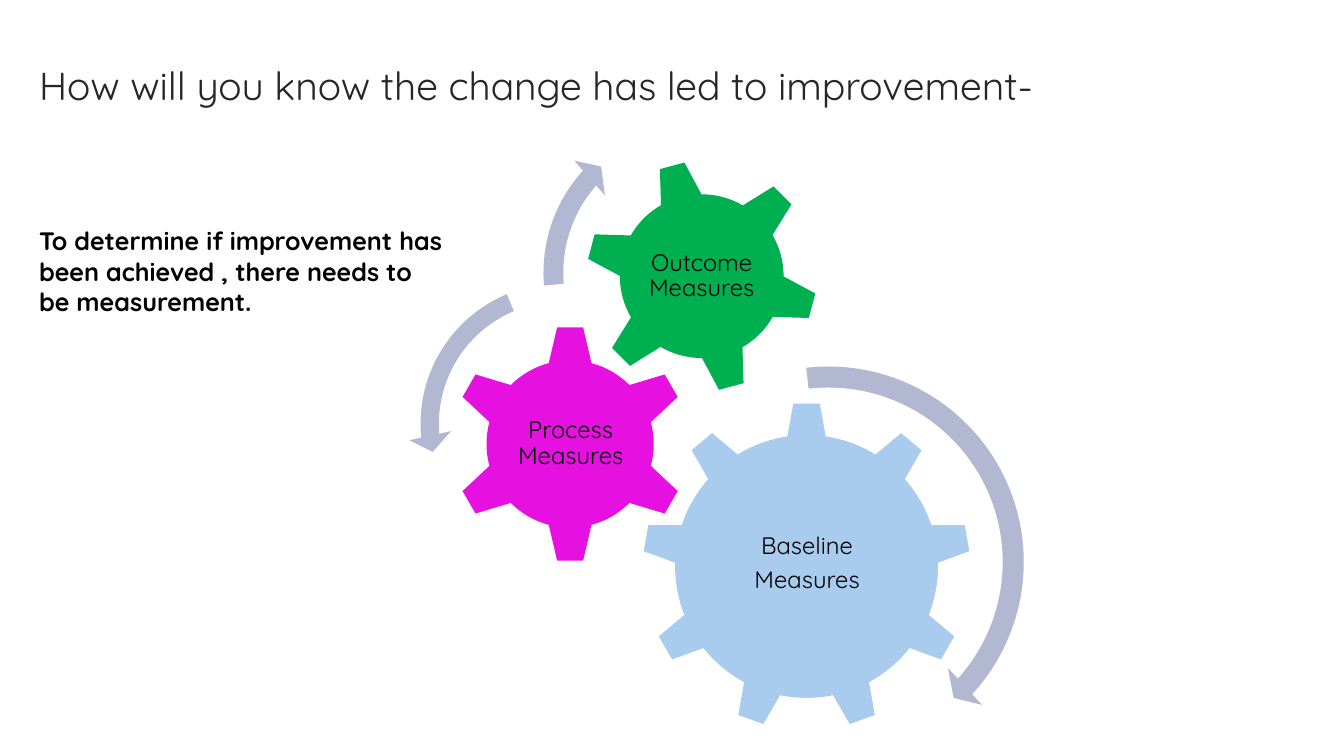
from pptx import Presentation
from pptx.dml.color import RGBColor
from pptx.enum.shapes import MSO_SHAPE
from pptx.enum.text import MSO_ANCHOR, PP_ALIGN
from pptx.util import Emu, Pt

COLORS = {
    "title": "262626",
    "text": "000000",
    "baseline": "A9CCEE",
    "process": "E610E1",
    "outcome": "00B050",
    "arrow": "B2B8D2",
}


class Deck:
    SCALE = 9144
    FONT = "Quicksand"

    def __init__(self, width, height):
        self.prs = Presentation()
        self.prs.slide_width = self.px(width)
        self.prs.slide_height = self.px(height)
        self.s = self.prs.slides.add_slide(self.prs.slide_layouts[6])

    def px(self, n):
        return Emu(n * self.SCALE)

    def color(self, name):
        return RGBColor.from_string(COLORS[name])

    def shape(self, kind, box, fill, rotation=0, adjustments=()):
        sp = self.s.shapes.add_shape(kind, *map(self.px, box))
        sp.shadow.inherit = False
        sp.fill.solid()
        sp.fill.fore_color.rgb = self.color(fill)
        sp.line.fill.background()
        sp.rotation = rotation
        for i, value in enumerate(adjustments):
            sp.adjustments[i] = value

    def text(self, box, lines, size, color="text", bold=False):
        tf = self.s.shapes.add_textbox(*map(self.px, box)).text_frame
        tf.word_wrap = True
        for i, line in enumerate(lines):
            p = tf.paragraphs[0] if i == 0 else tf.add_paragraph()
            r = p.add_run()
            r.text = line
            r.font.name = self.FONT
            r.font.size = Pt(size)
            r.font.bold = bold
            r.font.color.rgb = self.color(color)
        return tf

    def label(self, box, lines):
        tf = self.text(box, lines, 17)
        tf.vertical_anchor = MSO_ANCHOR.MIDDLE
        tf.margin_left = tf.margin_right = self.px(2)
        tf.margin_top = tf.margin_bottom = self.px(2)
        for p in tf.paragraphs:
            p.alignment = PP_ALIGN.CENTER
            p.line_spacing = 0.9
            p.space_after = Pt(6)

    def gear(self, kind, box, fill, label_box, lines, rotation=0):
        self.shape(kind, box, fill, rotation)
        self.label(label_box, lines)

    def arrow(self, kind, box, adjustments):
        self.shape(kind, box, "arrow", adjustments=adjustments)


def main():
    deck = Deck(1333, 750)
    deck.text((29, 56, 1150, 58),
              ["How will you know the change has led to improvement-"],
              27.9, "title")

    deck.gear(MSO_SHAPE.GEAR_9, (637, 399, 326, 326), "baseline",
              (703, 475, 195, 168), ["Baseline", "Measures"])
    deck.gear(MSO_SHAPE.GEAR_6, (447, 322, 237, 237), "process",
              (507, 382, 118, 117), ["Process Measures"])
    deck.gear(MSO_SHAPE.GEAR_6, (580, 158, 232, 232), "outcome",
              (631, 209, 130, 130), ["Outcome Measures"], rotation=345)

    deck.arrow(MSO_SHAPE.CIRCULAR_ARROW, (613, 349, 417, 417),
               (0.05, 2.99, 25.39, 158.12, 0.06))
    deck.arrow(MSO_SHAPE.LEFT_CIRCULAR_ARROW, (405, 269, 303, 303),
               (0.06, 4.3, 104.89, 148.38, 0.07))
    deck.arrow(MSO_SHAPE.CIRCULAR_ARROW, (526, 107, 327, 327),
               (0.06, 3.94, 133.14, 105.08, 0.07))

    deck.text((29, 219, 420, 101),
              ["To determine if improvement has been achieved , "
               "there needs to be measurement."],
              18, bold=True)
    deck.prs.save("out.pptx")


if __name__ == "__main__":
    main()
